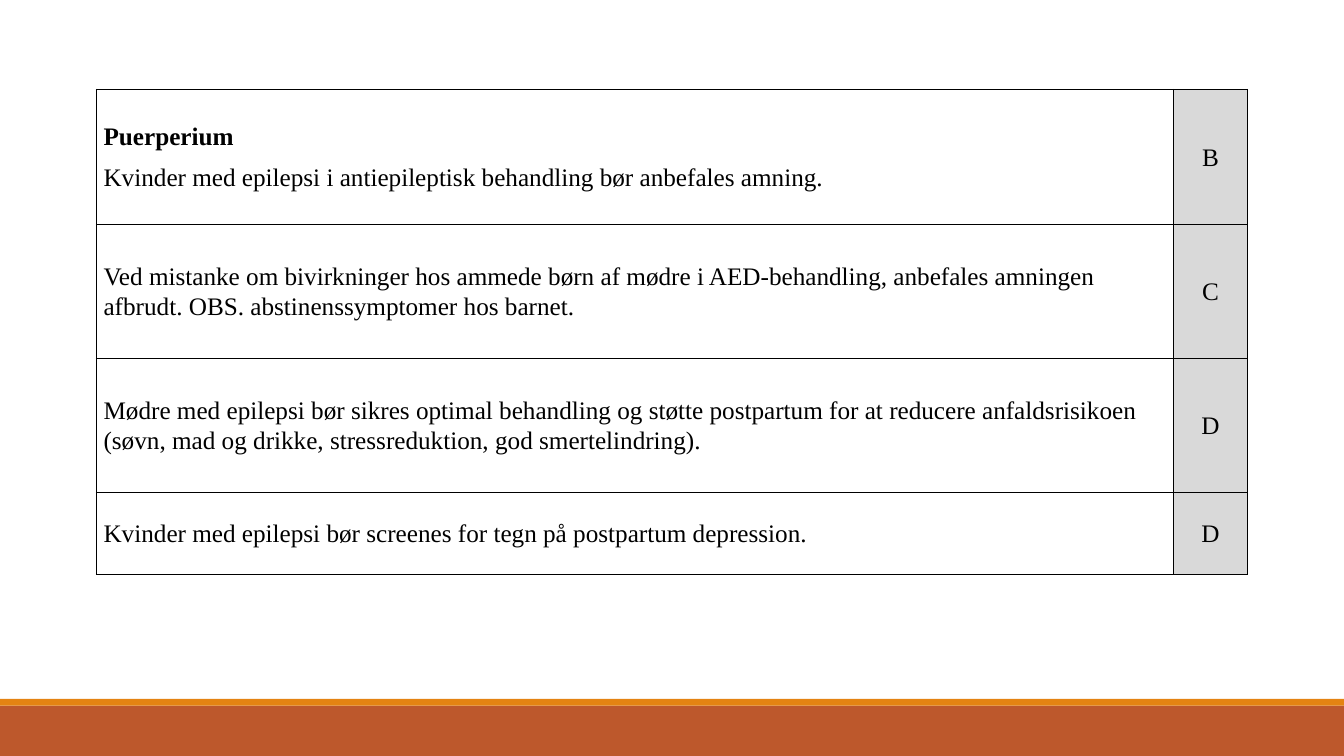
from dataclasses import dataclass

from lxml import etree
from pptx import Presentation
from pptx.dml.color import RGBColor
from pptx.enum.shapes import MSO_SHAPE
from pptx.enum.text import MSO_ANCHOR, PP_ALIGN
from pptx.oxml.ns import qn
from pptx.util import Pt

RECT = MSO_SHAPE.RECTANGLE
MIDDLE = MSO_ANCHOR.MIDDLE
LEFT, CENTER = PP_ALIGN.LEFT, PP_ALIGN.CENTER


@dataclass(frozen=True)
class Theme:
    font: str = "Times New Roman"
    size: float = 18
    text: str = "000000"
    border: str = "000000"
    paper: str = "FFFFFF"
    grade: str = "D9D9D9"
    footer: str = "BD582C"
    stripe: str = "E48312"


THEME = Theme()
SLIDE_W, SLIDE_H = 960, 540
FOOTER_H, STRIPE_H = 36, 4.8
TABLE_X, TABLE_Y = 69, 63.9
COL_WIDTHS = (769, 53.3)
CELL_MARGIN = 5

RECOMMENDATIONS = (
    (96.2, "Puerperium\nKvinder med epilepsi i antiepileptisk behandling bør anbefales amning.", "B"),
    (95.8, "Ved mistanke om bivirkninger hos ammede børn af mødre i AED-behandling, "
           "anbefales amningen afbrudt. OBS. abstinenssymptomer hos barnet.", "C"),
    (95.8, "Mødre med epilepsi bør sikres optimal behandling og støtte postpartum for at "
           "reducere anfaldsrisikoen (søvn, mad og drikke, stressreduktion, god smertelindring).", "D"),
    (58.8, "Kvinder med epilepsi bør screenes for tegn på postpartum depression.", "D"),
)


def rgb(color):
    return RGBColor.from_string(color)


def add_rect(s, x, y, w, h, fill, line_width=0):
    sp = s.shapes.add_shape(RECT, Pt(x), Pt(y), Pt(w), Pt(h))
    sp.shadow.inherit = False
    sp.fill.solid()
    sp.fill.fore_color.rgb = rgb(fill)
    if line_width:
        sp.line.color.rgb = rgb(fill)
        sp.line.width = Pt(line_width)
    else:
        sp.line.fill.background()


def set_borders(cell, color, width):
    tc_pr = cell._tc.get_or_add_tcPr()
    for side in ("a:lnL", "a:lnR", "a:lnT", "a:lnB"):
        ln = etree.SubElement(tc_pr, qn(side), w=str(Pt(width)))
        fill = etree.SubElement(ln, qn("a:solidFill"))
        etree.SubElement(fill, qn("a:srgbClr"), val=color)


def fill_cell(cell, text, align, fill=None):
    set_borders(cell, THEME.border, 1)
    if fill:
        cell.fill.solid()
        cell.fill.fore_color.rgb = rgb(fill)
    else:
        cell.fill.background()
    cell.vertical_anchor = MIDDLE
    cell.margin_left = cell.margin_right = Pt(CELL_MARGIN)
    cell.margin_top = cell.margin_bottom = Pt(CELL_MARGIN)
    tf = cell.text_frame
    tf.text = text
    for p in tf.paragraphs:
        p.alignment = align
        p.line_spacing = 1.07
        p.space_after = Pt(8)
        for r in p.runs:
            r.font.name = THEME.font
            r.font.size = Pt(THEME.size)
            r.font.color.rgb = rgb(THEME.text)


def add_recommendations(s):
    height = sum(row[0] for row in RECOMMENDATIONS)
    table = s.shapes.add_table(len(RECOMMENDATIONS), len(COL_WIDTHS), Pt(TABLE_X), Pt(TABLE_Y),
                               Pt(sum(COL_WIDTHS)), Pt(height)).table
    table.first_row = False
    table.horz_banding = False
    for column, width in zip(table.columns, COL_WIDTHS):
        column.width = Pt(width)
    for i, (row_height, advice, grade) in enumerate(RECOMMENDATIONS):
        table.rows[i].height = Pt(row_height)
        fill_cell(table.cell(i, 0), advice, LEFT)
        fill_cell(table.cell(i, 1), grade, CENTER, THEME.grade)
    heading = table.cell(0, 0).text_frame.paragraphs[0]
    heading.runs[0].font.bold = True


def main():
    prs = Presentation()
    prs.slide_width, prs.slide_height = Pt(SLIDE_W), Pt(SLIDE_H)
    s = prs.slides.add_slide(prs.slide_layouts[6])
    footer_y = SLIDE_H - FOOTER_H
    add_rect(s, 0, footer_y, SLIDE_W, FOOTER_H, THEME.footer)
    add_rect(s, 0, footer_y - STRIPE_H, SLIDE_W, STRIPE_H, THEME.stripe)
    add_rect(s, 32.4, 34.6, 895, 442, THEME.paper, 1.25)
    add_recommendations(s)
    prs.save("out.pptx")


if __name__ == "__main__":
    main()
